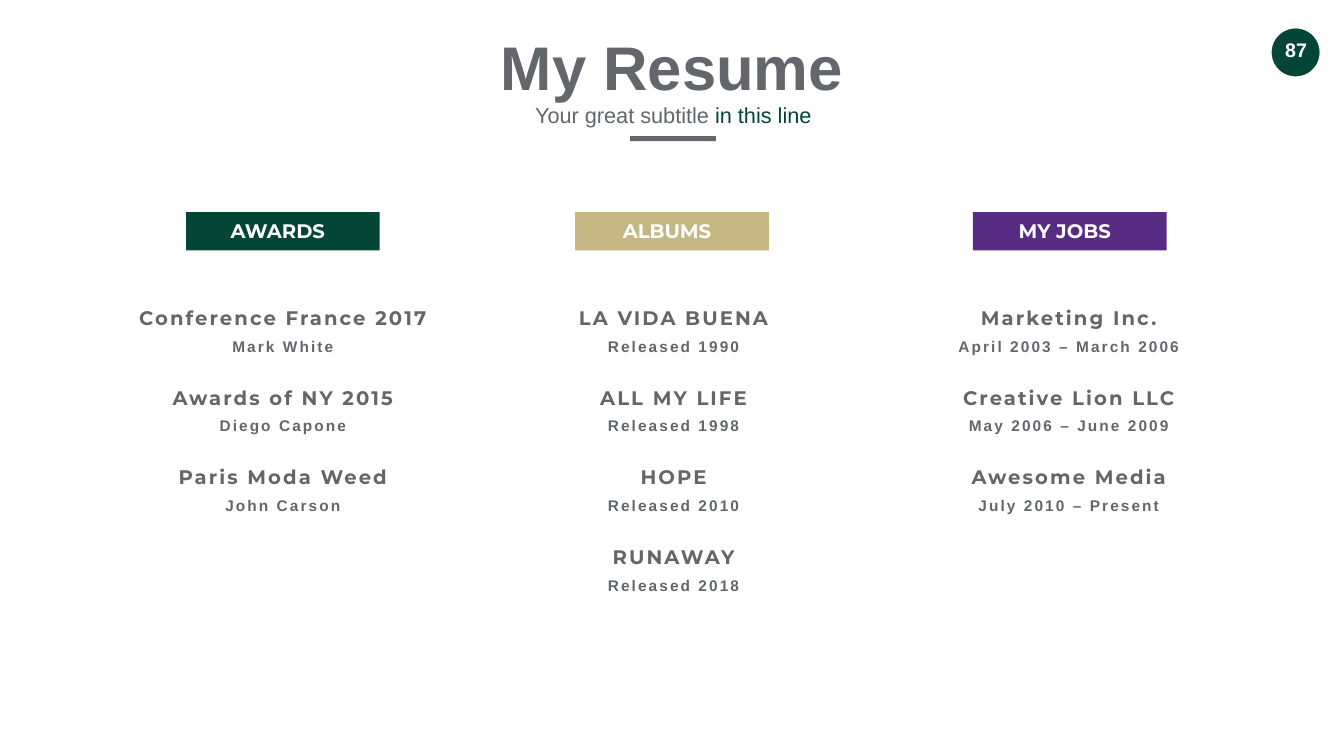
"""Build the "My Resume" slide with three columns of entries."""
from pptx import Presentation
from pptx import util as u
from pptx.dml.color import RGBColor
from pptx.enum import shapes, text

GREY, GREEN, GOLD, PURPLE, WHITE = "63666A", "034638", "C5B783", "582C83", "FFFFFF"
ENTRY_TOP, ENTRY_STEP, DETAIL_OFFSET = 6.02, 1.58, 0.61
BANNER_WIDTH, LABEL_SHIFT = 3.84, -0.1

# Banner centre, text centre, colour, label and its width,
# then each entry as heading, width, detail, width.
COLUMNS = [
    (5.61, 5.61, GREEN, "AWARDS", 2.1, [
        ("Conference France 2017", 6.37, "Mark White", 2.27),
        ("Awards of NY 2015", 5.04, "Diego Capone", 2.79),
        ("Paris Moda Weed", 4.5, "John Carson", 2.55),
    ]),
    (13.33, 13.36, GOLD, "ALBUMS", 2.05, [
        ("LA VIDA BUENA", 4.17, "Released 1990", 2.88),
        ("ALL MY LIFE", 3.39, "Released 1998", 2.88),
        ("HOPE", 1.59, "Released 2010", 2.88),
        ("RUNAWAY", 2.72, "Released 2018", 2.88),
    ]),
    (21.22, 21.2, PURPLE, "MY JOBS", 2.19, [
        ("Marketing Inc.", 3.88, "April 2003 – March 2006", 4.67),
        ("Creative Lion LLC", 4.71, "May 2006 – June 2009", 4.26),
        ("Awesome Media", 4.25, "July 2010 – Present", 4.28),
    ]),
]


def colour(value):
    """Return the colour for a hex string."""
    return RGBColor.from_string(value)


def add_block(slide, kind, left, top, width, height, fill):
    """Add a plain filled shape without outline or shadow."""
    shape = slide.shapes.add_shape(
        kind, u.Inches(left), u.Inches(top), u.Inches(width), u.Inches(height))
    shape.shadow.inherit = False
    shape.fill.solid()
    shape.fill.fore_color.rgb = colour(fill)
    shape.line.fill.background()
    return shape


def set_frame(shape, anchor, inset_x=0.1, inset_y=0.05):
    """Set up an unwrapped, centred text frame and return its paragraph."""
    frame = shape.text_frame
    frame.word_wrap = False
    frame.auto_size = text.MSO_AUTO_SIZE.SHAPE_TO_FIT_TEXT
    frame.vertical_anchor = anchor
    frame.margin_left = frame.margin_right = u.Inches(inset_x)
    frame.margin_top = frame.margin_bottom = u.Inches(inset_y)
    paragraph = frame.paragraphs[0]
    paragraph.alignment = text.PP_ALIGN.CENTER
    return paragraph


def add_run(paragraph, words, size, fill, font="Arial", bold=True, spacing=0):
    """Add one formatted run, with letter spacing in points."""
    run = paragraph.add_run()
    run.text = words
    run.font.name = font
    run.font.size = u.Pt(size)
    run.font.bold = bold
    run.font.color.rgb = colour(fill)
    if spacing:
        run.font._element.set("spc", str(spacing * 100))


def add_label(slide, words, centre, top, width, height, size, fill, **style):
    """Add a one-line text box around a horizontal centre."""
    box = slide.shapes.add_textbox(
        u.Inches(centre - width / 2), u.Inches(top), u.Inches(width), u.Inches(height))
    paragraph = set_frame(box, text.MSO_ANCHOR.MIDDLE)
    add_run(paragraph, words, size, fill, **style)


def place(shape, left, top, width, height):
    """Move and size a placeholder."""
    shape.left, shape.top = u.Inches(left), u.Inches(top)
    shape.width, shape.height = u.Inches(width), u.Inches(height)


def add_heading(slide):
    """Fill the title and subtitle and underline them."""
    title, subtitle = slide.shapes.title, slide.placeholders[1]
    place(title, 9.8, 0.53, 7.06, 1.58)
    add_run(set_frame(title, text.MSO_ANCHOR.TOP), "My Resume", 88, GREY)
    place(subtitle, 10.34, 1.79, 6.03, 0.81)
    paragraph = set_frame(subtitle, text.MSO_ANCHOR.TOP, 0.24, 0.12)
    paragraph.line_spacing = 1.2
    paragraph.space_before = u.Pt(0)
    add_run(paragraph, "Your great subtitle ", 31, GREY, bold=False)
    add_run(paragraph, "in this line", 31, GREEN, bold=False)
    add_block(slide, shapes.MSO_SHAPE.RECTANGLE, 12.5, 2.7, 1.7, 0.1, GREY)


def add_page_number(slide):
    """Add the round page number badge."""
    badge = add_block(slide, shapes.MSO_SHAPE.OVAL, 25.23, 0.57, 0.94, 0.94, GREEN)
    badge.line.color.rgb = colour(GREEN)
    badge.line.width = u.Pt(0.5)
    box = slide.shapes.add_textbox(
        u.Inches(25.27), u.Inches(0.66), u.Inches(0.88), u.Inches(0.67))
    add_run(set_frame(box, text.MSO_ANCHOR.TOP, 0.2, 0.1), "87", 28, WHITE)


def add_column(slide, banner_centre, text_centre, fill, label, label_width, entries):
    """Add a banner and the entries below it."""
    add_block(slide, shapes.MSO_SHAPE.RECTANGLE,
              banner_centre - BANNER_WIDTH / 2, 4.21, BANNER_WIDTH, 0.76, fill)
    add_label(slide, label, banner_centre + LABEL_SHIFT, 4.3, label_width, 0.57,
              28, WHITE, font="Montserrat")
    for index, (heading, heading_width, detail, detail_width) in enumerate(entries):
        top = ENTRY_TOP + index * ENTRY_STEP
        add_label(slide, heading, text_centre, top, heading_width, 0.57,
                  28, GREY, font="Montserrat", spacing=3)
        add_label(slide, detail, text_centre, top + DETAIL_OFFSET, detail_width, 0.47,
                  22, GREY, spacing=3)


def main():
    """Build and save the presentation."""
    presentation = Presentation()
    presentation.slide_width = u.Inches(26.66)
    presentation.slide_height = u.Inches(15)
    slide = presentation.slides.add_slide(presentation.slide_layouts[0])
    add_page_number(slide)
    for column in COLUMNS:
        add_column(slide, *column)
    add_heading(slide)
    presentation.save("out.pptx")


if __name__ == "__main__":
    main()
